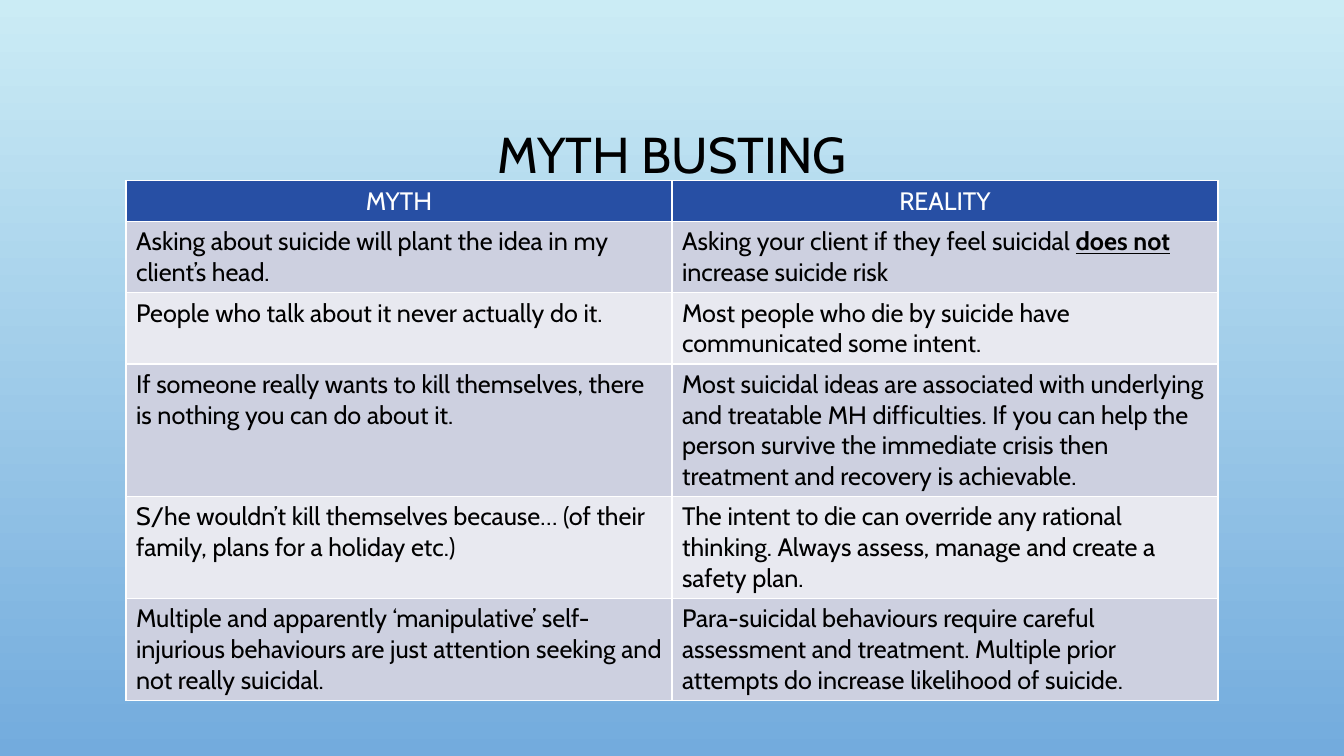
from dataclasses import dataclass

from lxml import etree
from pptx import Presentation
from pptx import util as u
from pptx.dml.color import RGBColor
from pptx.enum import text
from pptx.oxml import ns


@dataclass(frozen=True)
class Theme:
    font: str = "Cabin"
    title_size: float = 36
    body_size: float = 18
    ink: str = "000000"
    white: str = "FFFFFF"
    header: str = "274FA4"
    bands: tuple[str, str] = ("CDD0E0", "E8E9F0")
    sky: tuple[str, str] = ("CBECF5", "73ABDD")
    border_width: float = 1


@dataclass(frozen=True)
class Phrase:
    words: str
    stressed: bool = False


@dataclass(frozen=True)
class Belief:
    myth: str
    reality: tuple[Phrase, ...]
    lines: int


THEME = Theme()
TABLE_LEFT, TABLE_TOP, COLUMN_WIDTH = 90, 129, 390
LINE_HEIGHT, CELL_PADDING = 21.87, 7.2

BELIEFS = (
    Belief("Asking about suicide will plant the idea in my client’s head.",
           (Phrase("Asking your client if they feel suicidal "),
            Phrase("does not", stressed=True),
            Phrase(" increase suicide risk")), 2),
    Belief("People who talk about it never actually do it.",
           (Phrase("Most people who die by suicide have communicated some intent."),), 2),
    Belief("If someone really wants to kill themselves, there is nothing you can do about it.",
           (Phrase("Most suicidal ideas are associated with underlying and treatable MH "
                   "difficulties. If you can help the person survive the immediate crisis "
                   "then treatment and recovery is achievable."),), 4),
    Belief("S/he wouldn’t kill themselves because… (of their family, plans for a holiday etc.)",
           (Phrase("The intent to die can override any rational thinking. Always assess, "
                   "manage and create a safety plan."),), 3),
    Belief("Multiple and apparently ‘manipulative’ self-injurious behaviours are just "
           "attention seeking and not really suicidal.",
           (Phrase("Para-suicidal behaviours require careful assessment and treatment. "
                   "Multiple prior attempts do increase likelihood of suicide."),), 3),
)


def add_phrases(paragraph, phrases: tuple[Phrase, ...], size: float, color: str) -> None:
    for phrase in phrases:
        run = paragraph.add_run()
        run.text = phrase.words
        run.font.name = THEME.font
        run.font.size = u.Pt(size)
        run.font.color.rgb = RGBColor.from_string(color)
        run.font.bold = run.font.underline = phrase.stressed


def add_borders(cell) -> None:
    """Put the border lines ahead of the fill, as the schema orders them."""
    properties = cell._tc.get_or_add_tcPr()
    for position, side in enumerate(("lnL", "lnR", "lnT", "lnB")):
        line = etree.Element(ns.qn(f"a:{side}"), w=str(u.Pt(THEME.border_width)))
        fill = etree.SubElement(line, ns.qn("a:solidFill"))
        etree.SubElement(fill, ns.qn("a:srgbClr"), val=THEME.white)
        properties.insert(position, line)


def fill_cell(cell, phrases: tuple[Phrase, ...], fill: str, color: str,
              align: text.PP_ALIGN) -> None:
    cell.fill.solid()
    cell.fill.fore_color.rgb = RGBColor.from_string(fill)
    add_borders(cell)
    paragraph = cell.text_frame.paragraphs[0]
    paragraph.alignment = align
    add_phrases(paragraph, phrases, THEME.body_size, color)


def paint_background(slide) -> None:
    fill = slide.background.fill
    fill.gradient()
    fill.gradient_angle = 270
    for stop, color, position in zip(fill.gradient_stops, THEME.sky, (0, 1)):
        stop.color.rgb = RGBColor.from_string(color)
        stop.position = position


def add_title(slide) -> None:
    title = slide.shapes.add_textbox(u.Pt(72), u.Pt(49), u.Pt(816), u.Pt(126)).text_frame
    title.word_wrap = True
    title.vertical_anchor = text.MSO_ANCHOR.MIDDLE
    heading = title.paragraphs[0]
    heading.alignment = text.PP_ALIGN.CENTER
    heading.line_spacing = 0.9
    add_phrases(heading, (Phrase("MYTH BUSTING"),), THEME.title_size, THEME.ink)


def add_belief_table(slide) -> None:
    heights = [CELL_PADDING + LINE_HEIGHT * lines
               for lines in (1, *(belief.lines for belief in BELIEFS))]
    table = slide.shapes.add_table(
        len(heights), 2, u.Pt(TABLE_LEFT), u.Pt(TABLE_TOP),
        u.Pt(2 * COLUMN_WIDTH), u.Pt(sum(heights))).table
    table.horz_banding = False
    for row, height in zip(table.rows, heights):
        row.height = u.Pt(height)

    for column, heading in enumerate(("MYTH", "REALITY")):
        fill_cell(table.cell(0, column), (Phrase(heading),), THEME.header,
                  THEME.white, text.PP_ALIGN.CENTER)
    for index, belief in enumerate(BELIEFS):
        for column, phrases in enumerate(((Phrase(belief.myth),), belief.reality)):
            fill_cell(table.cell(index + 1, column), phrases, THEME.bands[index % 2],
                      THEME.ink, text.PP_ALIGN.LEFT)


def main() -> None:
    deck = Presentation()
    deck.slide_width, deck.slide_height = u.Pt(960), u.Pt(540)
    slide = deck.slides.add_slide(deck.slide_layouts[6])
    paint_background(slide)
    add_title(slide)
    add_belief_table(slide)
    deck.save("out.pptx")


if __name__ == "__main__":
    main()
